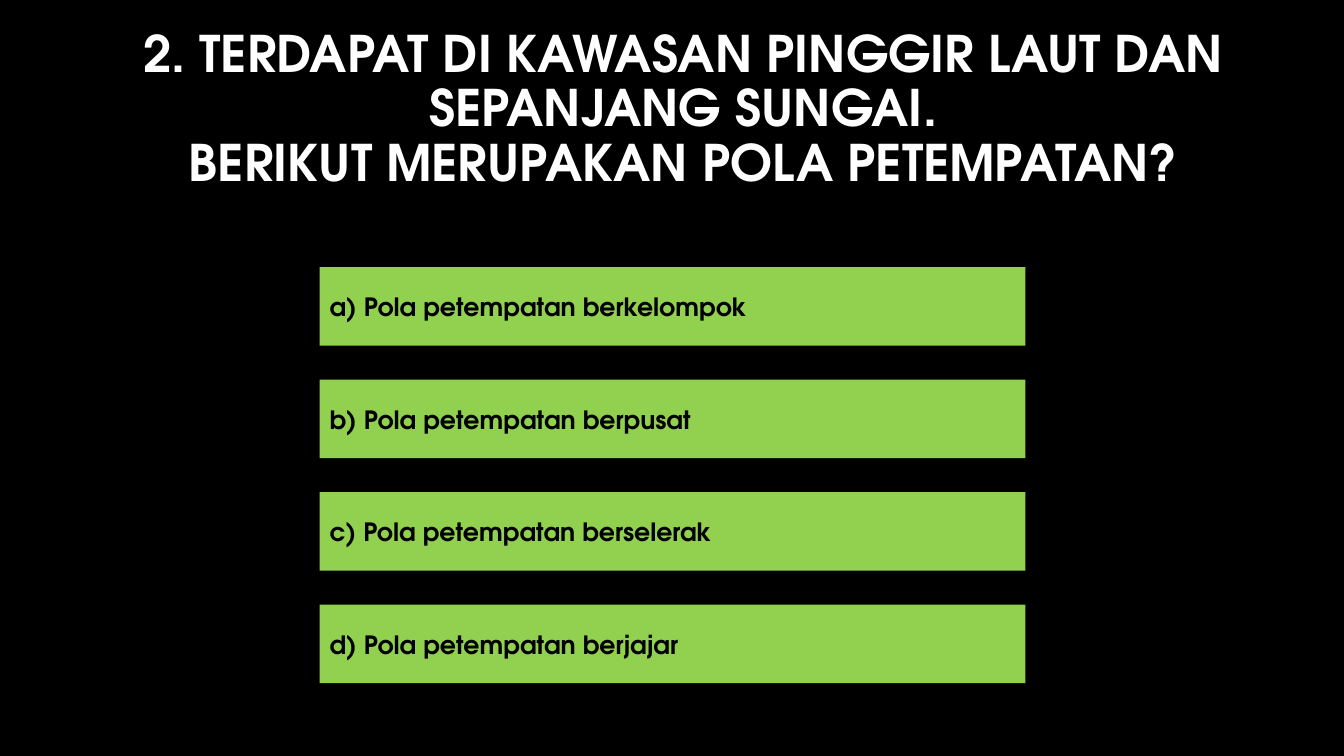
from pptx import Presentation
from pptx.dml.color import RGBColor
from pptx.enum.shapes import MSO_SHAPE
from pptx.enum.text import MSO_ANCHOR, PP_ALIGN
from pptx.util import Inches, Pt

FONT = "TeX Gyre Adventor"
COLORS = {"background": "000000", "title": "FFFFFF",
          "answer": "92D050", "answer_text": "000000"}
QUESTION = ("2. TERDAPAT DI KAWASAN PINGGIR LAUT DAN\v"
            "SEPANJANG SUNGAI.\v"
            "BERIKUT MERUPAKAN POLA PETEMPATAN?")
ANSWERS = ["a) Pola petempatan berkelompok",
           "b) Pola petempatan berpusat",
           "c) Pola petempatan berselerak",
           "d) Pola petempatan berjajar"]


def color(name):
    return RGBColor.from_string(COLORS[name])


def write(sp, text, size, color_name, align):
    tf = sp.text_frame
    tf.word_wrap = True
    tf.vertical_anchor = MSO_ANCHOR.MIDDLE
    p = tf.paragraphs[0]
    p.text = text
    p.alignment = align
    p.font.name = FONT
    p.font.size = Pt(size)
    p.font.bold = True
    p.font.color.rgb = color(color_name)
    return p


def add_question(s, text):
    sp = s.shapes.add_textbox(Inches(0.28), 0, Inches(12.16), Inches(2.19))
    # The wide left inset moves the centred lines to the right
    sp.text_frame.margin_left = Inches(0.93)
    p = write(sp, text, 36, "title", PP_ALIGN.CENTER)
    p.line_spacing = 0.9


def add_answer(s, text, top):
    sp = s.shapes.add_shape(MSO_SHAPE.RECTANGLE, Inches(3.17), Inches(top),
                            Inches(7), Inches(0.78))
    sp.shadow.inherit = False
    sp.fill.solid()
    sp.fill.fore_color.rgb = color("answer")
    sp.line.fill.background()
    write(sp, text, 18, "answer_text", PP_ALIGN.LEFT)


def main():
    prs = Presentation()
    prs.slide_width, prs.slide_height = Inches(13.33), Inches(7.5)
    s = prs.slides.add_slide(prs.slide_layouts[6])

    # Background
    fill = s.background.fill
    fill.solid()
    fill.fore_color.rgb = color("background")

    # Question and its evenly spaced answers
    add_question(s, QUESTION)
    for i, answer in enumerate(ANSWERS):
        add_answer(s, answer, 2.65 + i * 1.116)

    prs.save("out.pptx")


if __name__ == "__main__":
    main()
